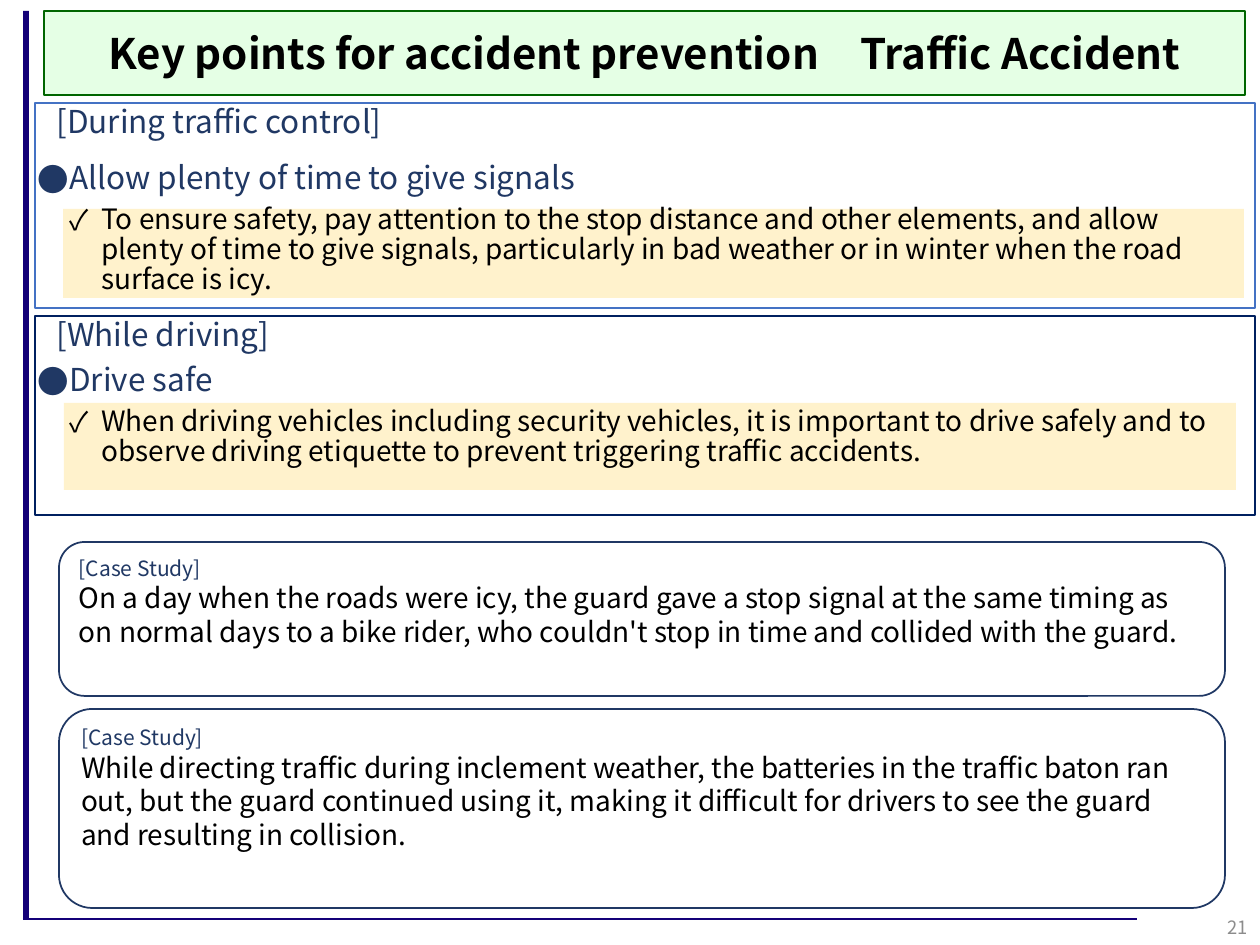
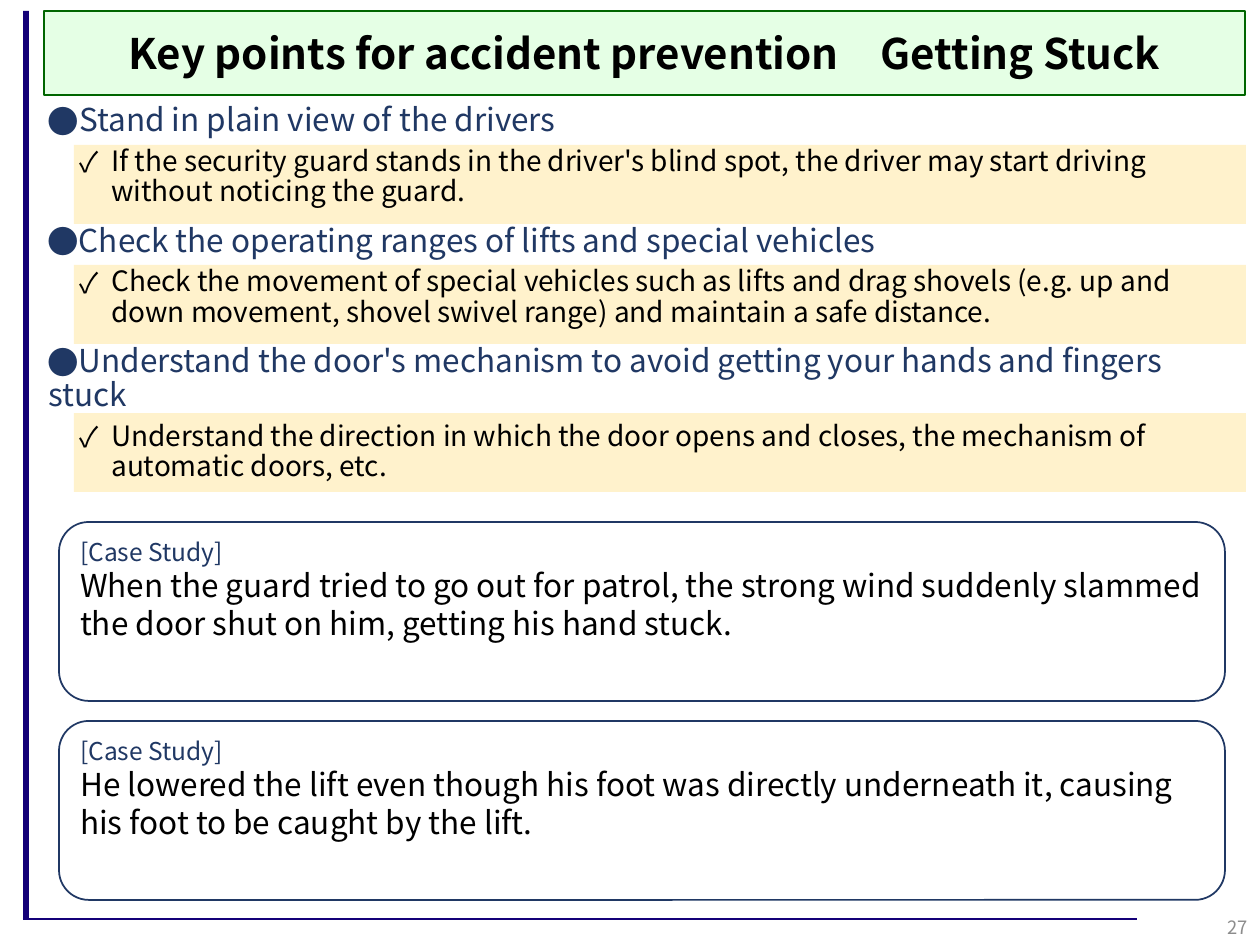
from lxml.etree import SubElement
from pptx import Presentation
from pptx.dml.color import RGBColor
from pptx.enum.shapes import MSO_CONNECTOR, MSO_SHAPE
from pptx.enum.text import MSO_ANCHOR, PP_ALIGN
from pptx.oxml.ns import qn
from pptx.util import Pt

PX = 914400 / 126
FONT = "Noto Sans CJK JP"
NAVY, INDIGO, BLACK, CREAM = "203864", "140078", "000000", "FFF2CC"
rgb = RGBColor.from_string


def add_box(slide, kind, area, fill=None, line=None):
    box = slide.shapes.add_shape(kind, *[round(n * PX) for n in area])
    box.shadow.inherit = False
    if fill:
        box.fill.solid()
        box.fill.fore_color.rgb = rgb(fill)
    else:
        box.fill.background()
    if line:
        box.line.color.rgb = rgb(line)
        box.line.width = Pt(1)
    else:
        box.line.fill.background()
    return box


def write(box, lines, align=PP_ALIGN.LEFT, anchor=MSO_ANCHOR.TOP, bold=False):
    frame = box.text_frame
    frame.word_wrap = True
    frame.vertical_anchor = anchor
    frame.text = "\n".join(text for text, _, _ in lines)
    for paragraph, (_, size, color) in zip(frame.paragraphs, lines):
        paragraph.alignment = align
        font = paragraph.runs[0].font
        font.name = FONT
        font.size = Pt(size)
        font.bold = bold
        font.color.rgb = rgb(color)
        SubElement(paragraph.runs[0].font._element, qn("a:ea"), typeface=FONT)
    return frame.paragraphs


pages = [
    {
        "topic": "Traffic Accident",
        "number": "21",
        "bands": [(63, 209, 1181, 89), (64, 403, 1172, 87)],
        "body": (25, 156, 1220, 370),
        "points": [
            ("Allow plenty of time to give signals", 32, 10,
             "To ensure safety, pay attention to the stop distance and other elements, and allow plenty of time "
             "to give signals, particularly in bad weather or in winter when the road surface is icy."),
            ("Drive safe", 32, 39.4,
             "When driving vehicles including security vehicles, it is important to drive safely and to "
             "observe driving etiquette to prevent triggering traffic accidents."),
        ],
        "case_sizes": (12, 16),
        "cases": [
            (542, 154, "On a day when the roads were icy, the guard gave a stop signal at the same timing as "
             "on normal days to a bike rider, who couldn't stop in time and collided with the guard."),
            (709, 199, "While directing traffic during inclement weather, the batteries in the traffic baton ran "
             "out, but the guard continued using it, making it difficult for drivers to see the guard "
             "and resulting in collision."),
        ],
        "situations": [
            ("[During traffic control]", 96, (35, 103, 1220, 205), "4472C4"),
            ("[While driving]", 309, (35, 316, 1220, 199), "002060"),
        ],
    },
    {
        "topic": "Getting Stuck",
        "number": "27",
        "bands": [(74, top, 1172, 79) for top in (413, 265, 145)],
        "body": (35, 98, 1220, 410),
        "points": [
            ("Stand in plain view of the drivers", 32, 10,
             "If the security guard stands in the driver's blind spot, the driver may start driving "
             "without noticing the guard."),
            ("Check the operating ranges of lifts and special vehicles", 1, 10,
             "Check the movement of special vehicles such as lifts and drag shovels (e.g. up and "
             "down movement, shovel swivel range) and maintain a safe distance."),
            ("Understand the door's mechanism to avoid getting your hands and fingers stuck", 1, 10,
             "Understand the direction in which the door opens and closes, the mechanism of "
             "automatic doors, etc."),
        ],
        "case_sizes": (14, 18),
        "cases": [
            (522, 179, "When the guard tried to go out for patrol, the strong wind suddenly slammed "
             "the door shut on him, getting his hand stuck."),
            (721, 179, "He lowered the lift even though his foot was directly underneath it, causing "
             "his foot to be caught by the lift."),
        ],
        "situations": [],
    },
]

deck = Presentation()
deck.slide_width = round(1260 * PX)
deck.slide_height = round(945 * PX)

for page in pages:
    slide = deck.slides.add_slide(deck.slide_layouts[6])
    add_box(slide, MSO_SHAPE.RECTANGLE, (23, 11, 6, 907), INDIGO)
    footer_rule = slide.shapes.add_connector(
        MSO_CONNECTOR.STRAIGHT, *[round(n * PX) for n in (23, 919, 1137, 919)])
    footer_rule.line.color.rgb = rgb(INDIGO)
    footer_rule.line.width = Pt(1)
    SubElement(footer_rule._element.spPr, qn("a:effectLst"))

    for band in page["bands"]:
        add_box(slide, MSO_SHAPE.RECTANGLE, band, CREAM)

    title = add_box(slide, MSO_SHAPE.RECTANGLE, (44, 11, 1201, 84), "CCFFCC", "006600")
    title_color = title._element.spPr.find(qn("a:solidFill")).find(qn("a:srgbClr"))
    SubElement(title_color, qn("a:alpha"), val="50000")
    write(title, [("Key points for accident prevention　" + page["topic"], 24, BLACK)],
          PP_ALIGN.CENTER, MSO_ANCHOR.MIDDLE, True)

    lines, layout = [], []
    for point, margin, gap, detail in page["points"]:
        lines += [(point, 18, NAVY), (detail, 16, BLACK)]
        layout += [("●", margin, gap, 0), ("✓", 64, 5, 1)]
    body = slide.shapes.add_textbox(*[round(n * PX) for n in page["body"]])
    for paragraph, (bullet, margin, gap, level) in zip(write(body, lines), layout):
        paragraph.level = level
        paragraph.line_spacing = 0.9
        paragraph.space_before = Pt(gap)
        properties = paragraph._p.get_or_add_pPr()
        properties.set("marL", str(round(margin * PX)))
        properties.set("indent", str(round(-32 * PX)))
        SubElement(properties, qn("a:buFont"), typeface=FONT)
        SubElement(properties, qn("a:buChar"), char=bullet)

    label_size, story_size = page["case_sizes"]
    for top, height, story in page["cases"]:
        case = add_box(slide, MSO_SHAPE.ROUNDED_RECTANGLE, (59, top, 1166, height), "FFFFFF", NAVY)
        write(case, [("[Case Study]", label_size, NAVY), (story, story_size, BLACK)])

    number = slide.shapes.add_textbox(*[round(n * PX) for n in (978, 910, 282, 35)])
    write(number, [(page["number"], 10.5, "8C8C8C")], PP_ALIGN.RIGHT, MSO_ANCHOR.MIDDLE)

    for heading, top, frame_area, frame_color in page["situations"]:
        situation = slide.shapes.add_textbox(*[round(n * PX) for n in (44, top, 397, 50)])
        write(situation, [(heading, 18, NAVY)])
        add_box(slide, MSO_SHAPE.RECTANGLE, frame_area, line=frame_color)

deck.save("out.pptx")
